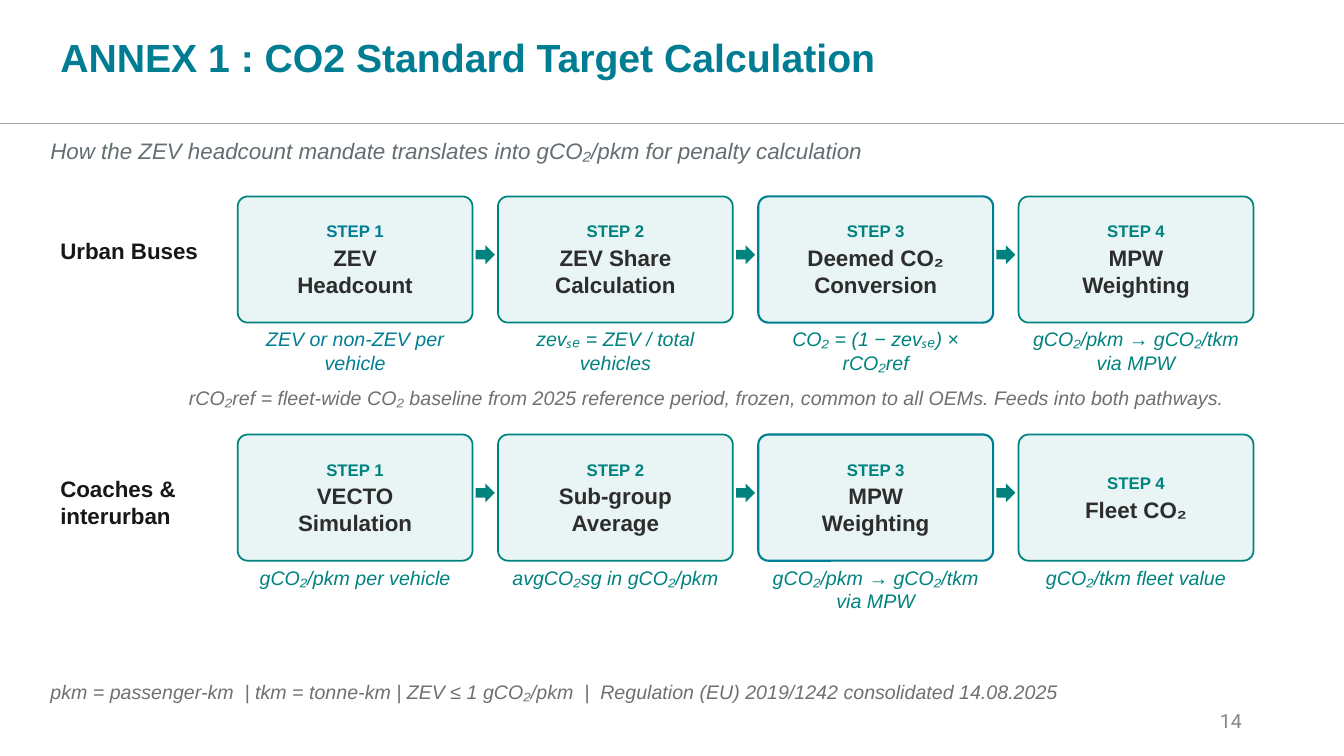
"""Builds the annex slide on the CO2 standard target calculation."""
from lxml import etree
from pptx import Presentation
from pptx import util as u
from pptx.dml.color import RGBColor
from pptx.enum import shapes, text
from pptx.oxml import ns

TEAL = RGBColor(0x00, 0x82, 0x7F)
BLUE = RGBColor(0x00, 0x7D, 0x93)
AZURE = RGBColor(0x02, 0x7D, 0x93)
PALE = RGBColor(0xE8, 0xF5, 0xF4)
DARK = RGBColor(0x2D, 0x2D, 0x2D)
BLACK = RGBColor(0x17, 0x17, 0x17)
SLATE = RGBColor(0x63, 0x6E, 0x72)
GREY = RGBColor(0x70, 0x70, 0x70)
SILVER = RGBColor(0x83, 0x87, 0x8B)
RULE = RGBColor(0xA6, 0xA6, 0xA6)

LEFT, PITCH, WIDTH, HEIGHT = 5.99, 6.56, 5.92, 3.18
MID, TOP = text.MSO_ANCHOR.MIDDLE, text.MSO_ANCHOR.TOP
LOW = text.MSO_ANCHOR.BOTTOM
CENTER, RIGHT = text.PP_ALIGN.CENTER, text.PP_ALIGN.RIGHT

URBAN = [
    ("ZEV\vHeadcount", "ZEV or non-ZEV per vehicle"),
    ("ZEV Share\vCalculation", "zevₛₑ = ZEV / total vehicles"),
    ("Deemed CO₂\vConversion", "CO₂ = (1 − zevₛₑ) × rCO₂ref"),
    ("MPW\vWeighting", "gCO₂/pkm → gCO₂/tkm via MPW"),
]
COACH = [
    ("VECTO\vSimulation", "gCO₂/pkm per vehicle"),
    ("Sub-group\vAverage", "avgCO₂sg in gCO₂/pkm"),
    ("MPW\vWeighting", "gCO₂/pkm → gCO₂/tkm via MPW"),
    ("Fleet CO₂", "gCO₂/tkm fleet value"),
]


def write(para, words, size=14, color=GREY, bold=False, ital=False,
          align=None, face="Arial", after=None, lead=None):
    """Fill a paragraph with formatted text."""
    para.text = words
    para.alignment = align
    para.space_after = after
    para.line_spacing = lead
    for run in para.runs:
        font = run.font
        font.name, font.size = face, u.Pt(size)
        font.bold, font.italic = bold, ital
        font.color.rgb = color


def set_frame(frame, anchor, side, edge):
    """Set wrapping, anchor and margins of a text frame."""
    frame.word_wrap = True
    frame.vertical_anchor = anchor
    frame.margin_left = frame.margin_right = u.Cm(side)
    frame.margin_top = frame.margin_bottom = u.Cm(edge)


def add_text(slide, words, left, top, width, height, anchor=TOP,
             side=0.25, edge=0.13, **style):
    """Add a text box with one paragraph."""
    box = slide.shapes.add_textbox(*map(u.Cm, (left, top, width, height)))
    set_frame(box.text_frame, anchor, side, edge)
    write(box.text_frame.paragraphs[0], words, **style)


def add_rule(slide, top, width):
    """Add the thin line below the title."""
    line = slide.shapes.add_connector(
        shapes.MSO_CONNECTOR.STRAIGHT, 0, u.Cm(top), width, u.Cm(top))
    line.line.color.rgb = RULE
    line.line.width = u.Pt(0.5)
    props = line._element.find(ns.qn("p:spPr"))
    etree.SubElement(props, ns.qn("a:effectLst"))


def add_shape(slide, kind, left, top, width, height, fill):
    """Add a filled shape without a shadow."""
    shape = slide.shapes.add_shape(
        kind, *map(u.Cm, (left, top, width, height)))
    shape.shadow.inherit = False
    shape.fill.solid()
    shape.fill.fore_color.rgb = fill
    return shape


def add_card(slide, left, top, num, name, tint):
    """Add a rounded card with step number and name."""
    card = add_shape(slide, shapes.MSO_SHAPE.ROUNDED_RECTANGLE,
                     left, top, WIDTH, HEIGHT, PALE)
    card.adjustments[0] = 0.08
    card.line.color.rgb = BLUE if num == 3 else TEAL
    card.line.width = u.Pt(1.5 if num == 3 else 1.25)
    frame = card.text_frame
    set_frame(frame, MID, 0.1, 0.1)
    write(frame.paragraphs[0], f"STEP {num}", size=12, color=tint,
          bold=True, align=CENTER, after=u.Pt(2))
    write(frame.add_paragraph(), name, size=16, color=DARK,
          bold=True, align=CENTER)


def add_arrow(slide, left, top):
    """Add a small arrow between two cards."""
    arrow = add_shape(slide, shapes.MSO_SHAPE.RIGHT_ARROW,
                      left, top, 0.48, 0.48, TEAL)
    arrow.line.fill.background()


def add_flow(slide, top, label, steps, first=TEAL):
    """Add a labelled row of steps with captions and arrows."""
    add_text(slide, label, 1.27, top + 0.89, 4.24, 0.99,
             size=16, color=BLACK, bold=True)
    for num, (name, note) in enumerate(steps, 1):
        left = LEFT + (num - 1) * PITCH
        tint = first if num == 1 else TEAL
        add_card(slide, left, top, num, name, tint)
        add_text(slide, note, left, top + 3.3, WIDTH, 0.79, side=0.05,
                 edge=0, color=tint, ital=True, align=CENTER)
        if num < len(steps):
            add_arrow(slide, left + 6, top + 1.23)


def main():
    """Build and save the slide."""
    deck = Presentation()
    deck.slide_width, deck.slide_height = u.Cm(33.87), u.Cm(19.05)
    slide = deck.slides.add_slide(deck.slide_layouts[6])
    add_rule(slide, 3.1, deck.slide_width)
    add_text(slide, "ANNEX 1 : CO2 Standard Target Calculation",
             1.27, 0.38, 31.32, 2.24, anchor=MID, size=28, color=BLUE,
             bold=True, lead=0.9)
    add_text(slide, "How the ZEV headcount mandate translates into "
             "gCO₂/pkm for penalty calculation", 1.27, 3.45, 31.32, 0.84,
             side=0, edge=0, size=16, color=SLATE, ital=True)
    add_flow(slide, 4.95, "Urban Buses", URBAN, AZURE)
    add_text(slide, "rCO₂ref = fleet-wide CO₂ baseline from 2025 reference "
             "period, frozen, common to all OEMs. Feeds into both pathways.",
             4.24, 9.6, 27.15, 0.86, anchor=MID, ital=True, align=CENTER)
    add_flow(slide, 10.95, "Coaches & interurban", COACH)
    add_text(slide, "pkm = passenger-km  | tkm = tonne-km | ZEV ≤ 1 gCO₂/pkm"
             "  |  Regulation (EU) 2019/1242 consolidated 14.08.2025",
             1.27, 16.94, 31.32, 0.79, anchor=LOW, side=0, edge=0, ital=True)
    add_text(slide, "14", 23.93, 17.65, 7.62, 1.02, anchor=MID,
             color=SILVER, align=RIGHT, face="Roboto")
    deck.save("out.pptx")


if __name__ == "__main__":
    main()
